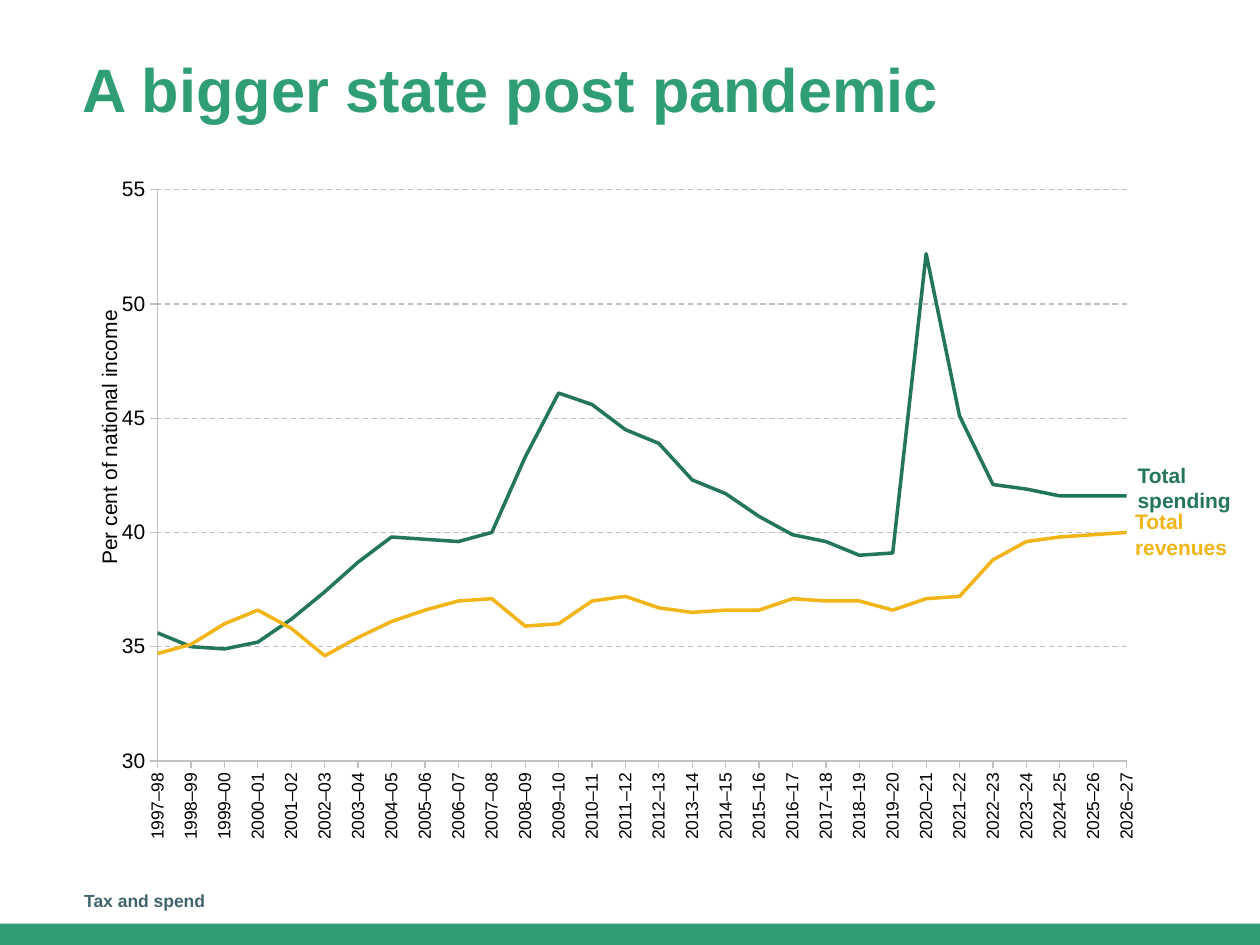
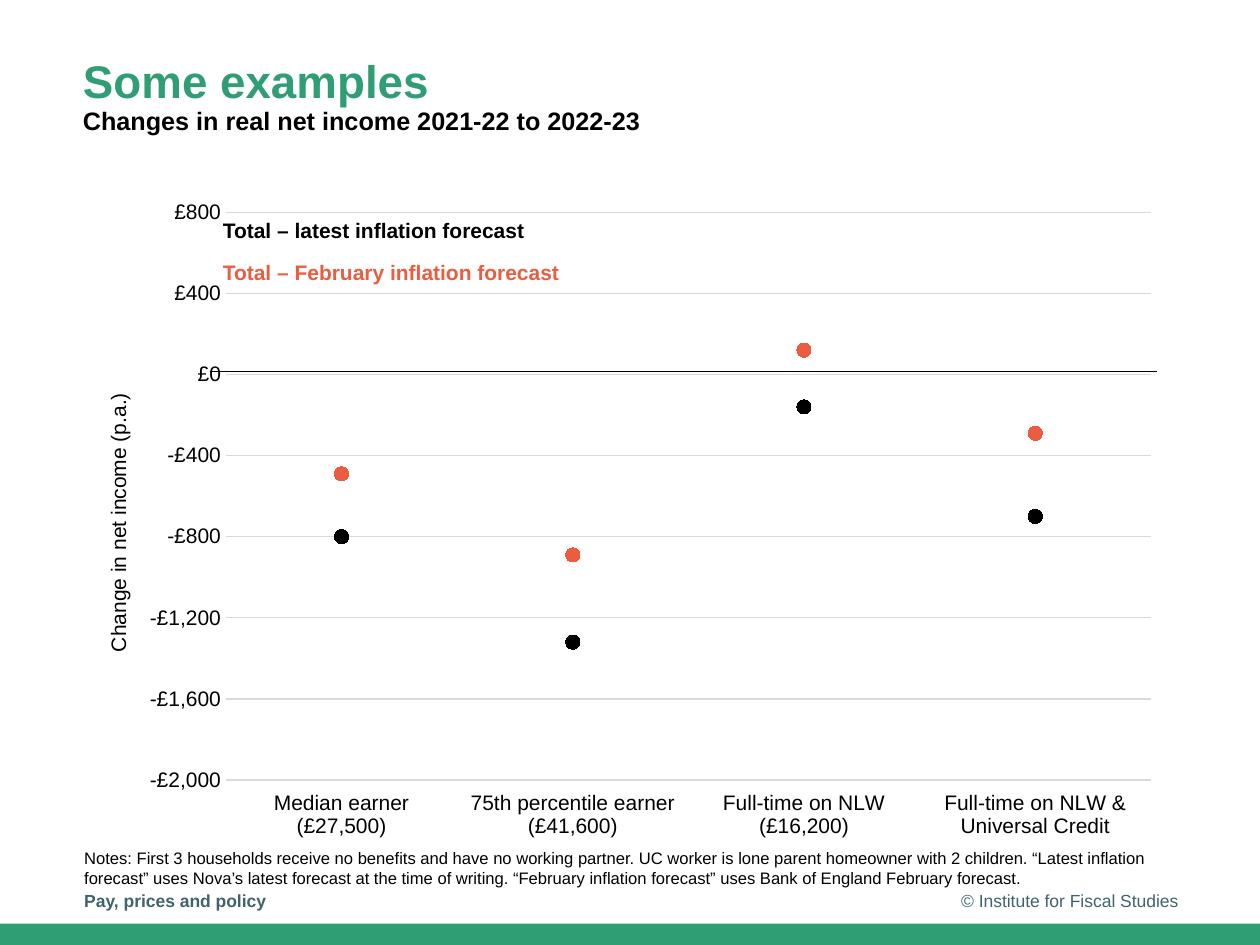
import pptx
import pptx.chart.data
import pptx.dml.color
import pptx.enum.chart
import pptx.enum.dml
import pptx.enum.shapes
import pptx.enum.text
import pptx.oxml
import pptx.oxml.ns
import pptx.util
from lxml import etree

Inches, Pt = pptx.util.Inches, pptx.util.Pt
qn = pptx.oxml.ns.qn
Align = pptx.enum.text.PP_ALIGN
Anchor = pptx.enum.text.MSO_ANCHOR
Tick = pptx.enum.chart.XL_TICK_MARK
ChartType = pptx.enum.chart.XL_CHART_TYPE

FONT = "Arial"
BLACK = "000000"
BRAND, SLATE = "309E75", "40646D"
SPENDING, REVENUES = "247658", "F2B517"
AXIS_GREY, GRID_GREY, CORAL = "BFBFBF", "D9D9D9", "EB5C40"

YEARS = [f"{year}–{(year + 1) % 100:02d}" for year in range(1997, 2027)]
TOTAL_SPENDING = [
    35.6, 35, 34.9, 35.2, 36.2, 37.4, 38.7, 39.8, 39.7, 39.6,
    40, 43.3, 46.1, 45.6, 44.5, 43.9, 42.3, 41.7, 40.7, 39.9,
    39.6, 39, 39.1, 52.2, 45.1, 42.1, 41.9, 41.6, 41.6, 41.6]
TOTAL_REVENUES = [
    34.7, 35.1, 36, 36.6, 35.8, 34.6, 35.4, 36.1, 36.6, 37,
    37.1, 35.9, 36, 37, 37.2, 36.7, 36.5, 36.6, 36.6, 37.1,
    37, 37, 36.6, 37.1, 37.2, 38.8, 39.6, 39.8, 39.9, 40]

HOUSEHOLDS = ["Median earner (£27,500)", "75th percentile earner (£41,600)",
              "Full-time on NLW (£16,200)", "Full-time on NLW & Universal Credit"]
FEBRUARY_FORECAST = [-490, -890, 120, -290]
LATEST_FORECAST = [-800, -1320, -160, -700]
NOTES = ("Notes: First 3 households receive no benefits and have no working partner. "
         "UC worker is lone parent homeowner with 2 children. “Latest inflation "
         "forecast” uses Nova’s latest forecast at the time of writing. “February "
         "inflation forecast” uses Bank of England February forecast.")


def rgb(colour):
    return pptx.dml.color.RGBColor.from_string(colour)


def style_font(font, size, colour, bold=False):
    font.name, font.size, font.bold = FONT, Pt(size), bold
    font.color.rgb = rgb(colour)


def style_line(line, colour, width):
    line.color.rgb = rgb(colour)
    line.width = Pt(width)


def add_text(slide, box, text, styles, align=Align.LEFT, anchor=Anchor.TOP):
    """Write one paragraph; styles holds (size, colour, bold) for each run."""
    frame = slide.shapes.add_textbox(*map(Inches, box)).text_frame
    frame.word_wrap = True
    frame.vertical_anchor = anchor
    paragraph = frame.paragraphs[0]
    paragraph.text = text
    paragraph.alignment = align
    for run, style in zip(paragraph.runs, styles):
        style_font(run.font, *style)
    return frame


def add_band(slide):
    band = slide.shapes.add_shape(pptx.enum.shapes.MSO_SHAPE.RECTANGLE,
                                  *map(Inches, (0, 7.33, 10, 0.17)))
    band.shadow.inherit = False
    band.fill.solid()
    band.fill.fore_color.rgb = rgb(BRAND)
    band.line.fill.background()


def add_title(slide, text, *styles):
    frame = add_text(slide, (0.56, 0.37, 7.48, 0.63), text, styles)
    frame.margin_top = Inches(0.1)
    frame.paragraphs[0].line_spacing = 0.9


def add_footer(slide, topic, copyright_line=None):
    add_text(slide, (0.57, 6.95, 3.38, 0.4), topic, [(10, SLATE, True)],
             anchor=Anchor.MIDDLE)
    if copyright_line:
        add_text(slide, (7.2, 6.95, 2.25, 0.4), copyright_line, [(10, SLATE)],
                 Align.RIGHT, Anchor.MIDDLE)


def set_layout(parent, index, **fractions):
    """Pin a chart part at fractions of the chart's width and height."""
    for old in parent.findall(qn("c:layout")):
        parent.remove(old)
    layout = etree.Element(qn("c:layout"))
    manual = etree.SubElement(layout, qn("c:manualLayout"))
    settings = {"xMode": "edge", "yMode": "edge", **fractions}
    if "w" in fractions:
        settings = {"layoutTarget": "inner", **settings}
    for key, value in settings.items():
        etree.SubElement(manual, qn(f"c:{key}")).set("val", str(value))
    parent.insert(index, layout)


def set_cross_between(axis, mode):
    """Let the value axis cross on a category (midCat) or between two."""
    element = axis._element
    for old in element.findall(qn("c:crossBetween")):
        element.remove(old)
    cross_between = etree.Element(qn("c:crossBetween"))
    cross_between.set("val", mode)
    element.find(qn("c:crosses")).addnext(cross_between)


def turn_upwards(body):
    body.set("rot", "-5400000")
    body.set("vert", "horz")


def add_line_chart(slide, box, kind, categories, series_values, plot, limits,
                   axis_title, title_at, category_size, tick, grid,
                   number_format, cross_between):
    data = pptx.chart.data.CategoryChartData()
    data.categories = categories
    for number, values in enumerate(series_values, 1):
        data.add_series(f"Series {number}", values)
    chart = slide.shapes.add_chart(kind, *map(Inches, box), data).chart
    chart.has_legend = chart.has_title = False
    style_font(chart.font, 12, BLACK)
    chart.plots[0].vary_by_categories = False
    for series in chart.plots[0].series:
        series.smooth = False
    set_layout(chart._chartSpace.chart.plotArea, 0, **dict(zip("xywh", plot)))

    for axis, size in ((chart.category_axis, category_size), (chart.value_axis, 12)):
        axis.major_tick_mark, axis.minor_tick_mark = tick, Tick.NONE
        style_font(axis.tick_labels.font, size, BLACK)
        style_line(axis.format.line, grid, 0.75)
    values_axis = chart.value_axis
    values_axis.minimum_scale, values_axis.maximum_scale, values_axis.major_unit = limits
    values_axis.has_major_gridlines = True
    style_line(values_axis.major_gridlines.format.line, grid, 0.75)
    values_axis.tick_labels.number_format = number_format
    values_axis.tick_labels.number_format_is_linked = False
    set_cross_between(values_axis, cross_between)
    title = values_axis.axis_title
    title.text_frame.text = axis_title
    style_font(title.text_frame.paragraphs[0].runs[0].font, 12, BLACK)
    set_layout(title._element, 1, **dict(zip("xy", title_at)))
    turn_upwards(title.text_frame._txBody.find(qn("a:bodyPr")))
    return chart


def add_spending_chart(slide, box):
    chart = add_line_chart(
        slide, box, ChartType.LINE, YEARS, [TOTAL_SPENDING, TOTAL_REVENUES],
        plot=(0.079, 0.029, 0.879, 0.838), limits=(30, 55, 5),
        axis_title="Per cent of national income", title_at=(0.02, 0.2),
        category_size=10, tick=Tick.OUTSIDE, grid=AXIS_GREY,
        number_format="#,##0", cross_between="midCat")
    for series, colour in zip(chart.plots[0].series, (SPENDING, REVENUES)):
        style_line(series.format.line, colour, 2)
    gridline = chart.value_axis.major_gridlines.format.line
    gridline.dash_style = pptx.enum.dml.MSO_LINE.DASH
    turn_upwards(chart.category_axis._element.find(f"{qn('c:txPr')}/{qn('a:bodyPr')}"))

    left, top, width, _ = box
    for label, colour, dx, dy in (("Total spending", SPENDING, -0.38, 2.27),
                                  ("Total revenues", REVENUES, -0.4, 2.64)):
        add_text(slide, (left + width + dx, top + dy, 1.02, 0.5), label,
                 [(12, colour, True)])


def add_income_chart(slide, box):
    chart = add_line_chart(
        slide, box, ChartType.LINE_MARKERS, HOUSEHOLDS,
        [FEBRUARY_FORECAST, LATEST_FORECAST],
        plot=(0.141, 0.037, 0.839, 0.857), limits=(-2000, 800, 400),
        axis_title="Change in net income (p.a.)", title_at=(0.028, 0.304),
        category_size=12, tick=Tick.NONE, grid=GRID_GREY,
        number_format='"£"#,##0', cross_between="between")
    for series, colour in zip(chart.plots[0].series, (CORAL, BLACK)):
        series.format.line.fill.background()
        marker = series.marker
        marker.style = pptx.enum.chart.XL_MARKER_STYLE.CIRCLE
        marker.size = 8
        marker.format.fill.solid()
        marker.format.fill.fore_color.rgb = rgb(colour)
        marker.format.line.fill.background()
    chart.category_axis.tick_label_position = pptx.enum.chart.XL_TICK_LABEL_POSITION.LOW
    chart.value_axis.format.line.fill.background()

    left, top = box[0] + 1.11, box[1]
    for label, colour, dy in (("Total – latest inflation forecast", BLACK, 0.19),
                              ("Total – February inflation forecast", CORAL, 0.52)):
        add_text(slide, (left, top + dy, 3.6, 0.3), label, [(12, colour, True)])
    zero_y = top + 1.46
    zero_line = slide.shapes.add_connector(
        pptx.enum.shapes.MSO_CONNECTOR.STRAIGHT,
        *map(Inches, (left, zero_y, left + 7.51, zero_y)))
    style_line(zero_line.line, BLACK, 0.5)
    etree.SubElement(zero_line._element.spPr, qn("a:effectLst"))


def new_slide(deck):
    slide = deck.slides.add_slide(deck.slide_layouts[6])
    add_band(slide)
    return slide


def build_state_size_slide(deck):
    slide = new_slide(deck)
    add_spending_chart(slide, (0.56, 1.35, 8.75, 5.41))
    add_footer(slide, "Tax and spend")
    add_title(slide, "A bigger state post pandemic", (35, BRAND, True))


def build_examples_slide(deck):
    slide = new_slide(deck)
    add_income_chart(slide, (0.56, 1.49, 8.75, 5.26))
    add_footer(slide, "Pay, prices and policy", "© Institute for Fiscal Studies")
    add_title(slide, "Some examples\vChanges in real net income 2021-22 to 2022-23",
              (26.1, BRAND, True), (14.4, BLACK, True))
    add_text(slide, (0.57, 6.68, 9.07, 0.58), NOTES, [(9.5, BLACK)])


def main():
    deck = pptx.Presentation()
    deck.slide_width, deck.slide_height = Inches(10), Inches(7.5)
    build_state_size_slide(deck)
    build_examples_slide(deck)
    deck.save("out.pptx")


if __name__ == "__main__":
    main()
